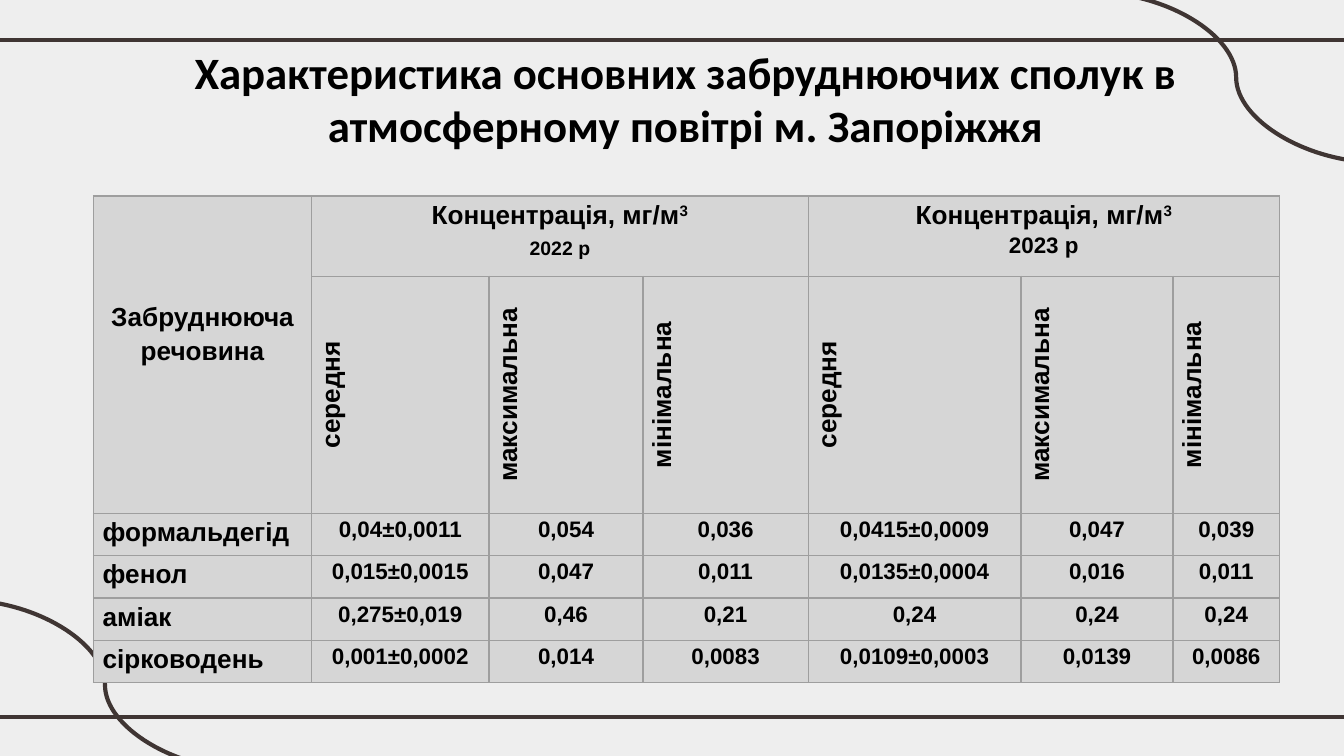
import pptx
import pptx.util
import pptx.dml.color
import pptx.enum.shapes
import pptx.enum.text
import lxml.etree
from pptx.oxml.ns import qn

Pt = pptx.util.Pt
ALIGN = pptx.enum.text.PP_ALIGN
ANCHOR = pptx.enum.text.MSO_ANCHOR
LINK = pptx.enum.shapes.MSO_CONNECTOR

INK, BACK, CELL, EDGE, BLACK = "3F3533", "EEEEEE", "D6D6D6", "9E9E9E", "000000"
TITLE = "Характеристика основних забруднюючих сполук в атмосферному повітрі м. Запоріжжя"
COLS = [117, 95, 82.5, 88.5, 114, 81.5, 57]
ROWS = [43, 127] + [22.7] * 4
KINDS = ["середня", "максимальна", "мінімальна"]
DATA = [
    ["формальдегід", "0,04±0,0011", "0,054", "0,036", "0,0415±0,0009", "0,047", "0,039"],
    ["фенол", "0,015±0,0015", "0,047", "0,011", "0,0135±0,0004", "0,016", "0,011"],
    ["аміак", "0,275±0,019", "0,46", "0,21", "0,24", "0,24", "0,24"],
    ["сірководень", "0,001±0,0002", "0,014", "0,0083", "0,0109±0,0003", "0,0139", "0,0086"],
]


def paint(target, color):
    if hasattr(target, "solid"):
        target.solid()
        target = target.fore_color
    target.rgb = pptx.dml.color.RGBColor.from_string(color)


def style(run, size, face="Arial", raised=False):
    run.font.size = Pt(size)
    run.font.name = face
    run.font.bold = True
    paint(run.font.color, BLACK)
    if raised:
        run.font._element.set("baseline", "30000")


def add_line(slide, kind, x, y, width, height):
    line = slide.shapes.add_connector(kind, Pt(x), Pt(y), Pt(x + width), Pt(y + height))
    line.line.width = Pt(2.25)
    paint(line.line.fill, INK)
    lxml.etree.SubElement(line._element.spPr, qn("a:effectLst"))


def add_title(slide):
    title = slide.shapes.title
    title.left, title.top, title.width, title.height = Pt(24.5), Pt(16.5), Pt(685.5), Pt(45.5)
    frame = title.text_frame
    frame.text = TITLE
    frame.word_wrap = True
    frame.auto_size = pptx.enum.text.MSO_AUTO_SIZE.NONE
    frame.vertical_anchor = ANCHOR.TOP
    frame.margin_left = frame.margin_right = Pt(7.2)
    frame.margin_top = frame.margin_bottom = Pt(7.2)
    para = frame.paragraphs[0]
    para.alignment = ALIGN.CENTER
    style(para.runs[0], 24, "Calibri")


def dress(cell):
    props = cell._tc.get_or_add_tcPr()
    for side in ("a:lnL", "a:lnR", "a:lnT", "a:lnB"):
        edge = lxml.etree.SubElement(props, qn(side), w=str(Pt(0.75)))
        fill = lxml.etree.SubElement(edge, qn("a:solidFill"))
        lxml.etree.SubElement(fill, qn("a:srgbClr"), val=EDGE)
    paint(cell.fill, CELL)
    cell.margin_left = cell.margin_right = Pt(5)
    cell.margin_top = cell.margin_bottom = Pt(0)


def write(para, text, size, align=ALIGN.CENTER, raised=False):
    para.text = text
    para.alignment = align
    para.line_spacing = 1.15
    style(para.runs[0], size, raised=raised)


def add_year(cell, year, size, raised):
    para = cell.text_frame.paragraphs[0]
    write(para, "Концентрація, мг/м", 14)
    power = para.add_run()
    power.text = "3"
    style(power, 14, raised=True)
    write(cell.text_frame.add_paragraph(), year, size, raised=raised)


def add_grid(slide):
    shape = slide.shapes.add_table(len(ROWS), len(COLS), Pt(50), Pt(105), Pt(sum(COLS)), Pt(sum(ROWS)))
    grid = shape.table
    for col, width in zip(grid.columns, COLS):
        col.width = Pt(width)
    for row, height in zip(grid.rows, ROWS):
        row.height = Pt(height)
    for cell in grid.iter_cells():
        dress(cell)

    head = grid.cell(0, 0)
    head.merge(grid.cell(1, 0))
    head.margin_top = Pt(55)
    write(head.text_frame.paragraphs[0], "Забруднююча речовина", 14)
    for col, year, size, raised in ((1, "2022 р", 18, True), (4, "2023 р", 12, False)):
        grid.cell(0, col).merge(grid.cell(0, col + 2))
        add_year(grid.cell(0, col), year, size, raised)

    for col, kind in enumerate(KINDS * 2, 1):
        cell = grid.cell(1, col)
        cell.vertical_anchor = ANCHOR.MIDDLE
        cell._tc.get_or_add_tcPr().set("vert", "vert270")
        write(cell.text_frame.paragraphs[0], kind, 14)

    for row, items in enumerate(DATA, 2):
        for col, text in enumerate(items):
            size, align = (12, ALIGN.CENTER) if col else (14, ALIGN.JUSTIFY)
            write(grid.cell(row, col).text_frame.paragraphs[0], text, size, align)


def main():
    deck = pptx.Presentation()
    deck.slide_width, deck.slide_height = Pt(720), Pt(405)
    slide = deck.slides.add_slide(deck.slide_layouts[5])
    paint(slide.background.fill, BACK)
    for y in (21.5, 384):
        add_line(slide, LINK.STRAIGHT, -6, y, 732, 0)
    for x, y in ((-19.5, 321.5), (586.5, -4)):
        add_line(slide, LINK.CURVE, x, y, 151.5, 91)
    add_title(slide)
    add_grid(slide)
    deck.save("out.pptx")


if __name__ == "__main__":
    main()
